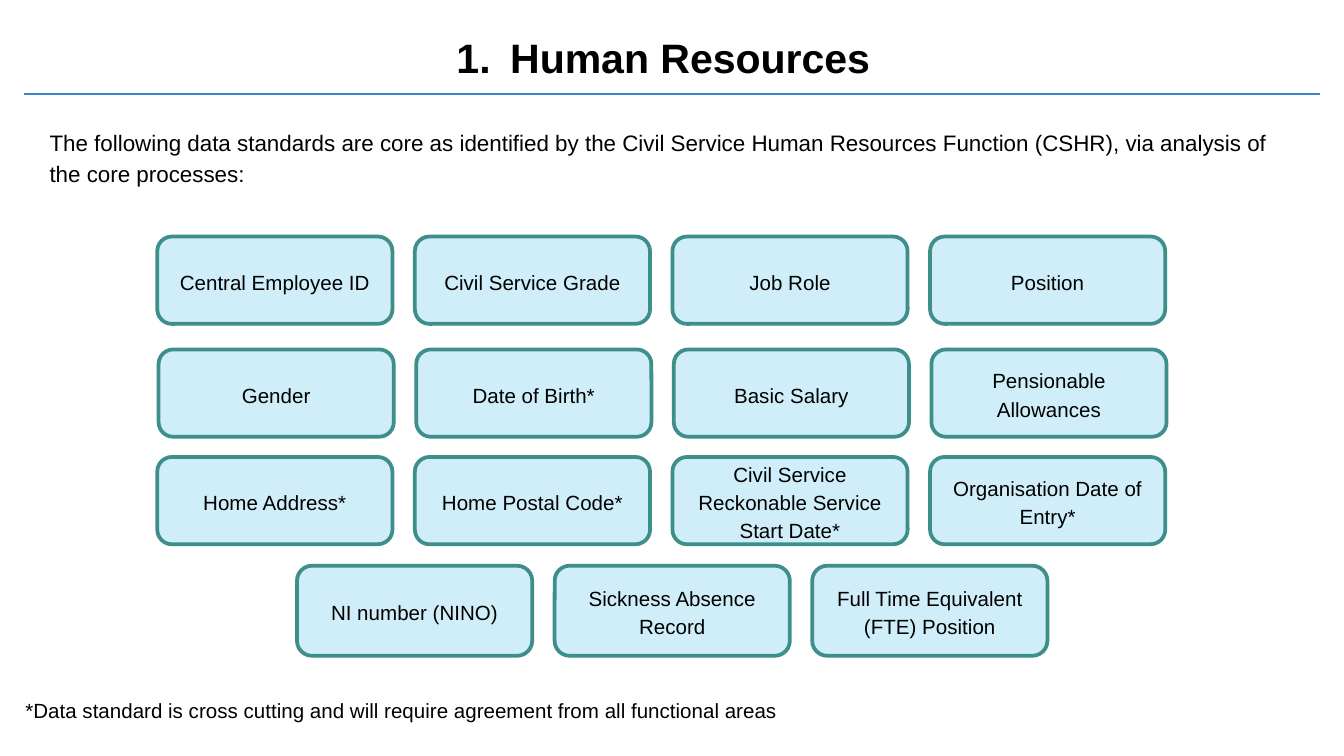
from pptx import Presentation
from pptx.dml.color import RGBColor
from pptx.enum.shapes import MSO_CONNECTOR, MSO_SHAPE
from pptx.enum.text import MSO_ANCHOR, PP_ALIGN
from pptx.oxml.ns import qn
from pptx.util import Inches, Pt
from lxml import etree

ROUND = MSO_SHAPE.ROUNDED_RECTANGLE
STRAIGHT = MSO_CONNECTOR.STRAIGHT
TOP, MIDDLE = MSO_ANCHOR.TOP, MSO_ANCHOR.MIDDLE
LEFT, CENTER = PP_ALIGN.LEFT, PP_ALIGN.CENTER

COLORS = {"text": "000000", "rule": "3D85C6", "fill": "D0EEF9", "edge": "3E8E8A"}
FONT = "Arial"

# Each row: left, top, height, labels
ROWS = [
    (1.17, 1.76, 0.65, ["Central Employee ID", "Civil Service Grade",
                        "Job Role", "Position"]),
    (1.18, 2.6, 0.65, ["Gender", "Date of Birth*", "Basic Salary",
                       "Pensionable Allowances"]),
    (1.17, 3.4, 0.65, ["Home Address*", "Home Postal Code*",
                       "Civil Service Reckonable Service Start Date*",
                       "Organisation Date of Entry*"]),
    (2.21, 4.21, 0.67, ["NI number (NINO)", "Sickness Absence Record",
                        "Full Time Equivalent (FTE) Position"]),
]
CARD = 1.75
STEP = 5.75 / 3  # four columns, first left edge to last


def color(name):
    return RGBColor.from_string(COLORS[name])


def write(shape, text, size=11, bold=False, align=LEFT, anchor=TOP,
          space=1.0, inset=(0.1, 0.1), number=False):
    frame = shape.text_frame
    frame.word_wrap = True
    frame.vertical_anchor = anchor
    frame.margin_left = frame.margin_right = Inches(inset[0])
    frame.margin_top = frame.margin_bottom = Inches(inset[1])
    para = frame.paragraphs[0]
    para.text = text
    para.alignment = align
    para.line_spacing = space
    para.space_before = Pt(0)
    if number:
        props = para._p.get_or_add_pPr()
        props.set("marL", str(Inches(0.5)))
        props.set("indent", str(Inches(-0.4)))
        tint = etree.SubElement(props, qn("a:buClr"))
        etree.SubElement(tint, qn("a:srgbClr"), val=COLORS["text"])
        etree.SubElement(props, qn("a:buFont"), typeface=FONT)
        etree.SubElement(props, qn("a:buAutoNum"), type="arabicPeriod")
    font = para.runs[0].font
    font.name, font.size, font.bold = FONT, Pt(size), bold
    font.color.rgb = color("text")


def add_text(slide, box, text, **style):
    shape = slide.shapes.add_textbox(*map(Inches, box))
    write(shape, text, **style)


def add_head(slide, box, text):
    title = slide.shapes.title
    title.left, title.top, title.width, title.height = map(Inches, box)
    write(title, text, size=22, bold=True, align=CENTER, anchor=MIDDLE,
          space=0.9, inset=(0.07, 0.04), number=True)


def add_rule(slide, left, top, width):
    line = slide.shapes.add_connector(
        STRAIGHT, Inches(left), Inches(top), Inches(left + width), Inches(top))
    line.line.color.rgb = color("rule")
    line.line.width = Pt(1.5)
    etree.SubElement(line._element.spPr, qn("a:effectLst"))


def add_card(slide, box, text):
    card = slide.shapes.add_shape(ROUND, *map(Inches, box))
    card.shadow.inherit = False
    card.fill.solid()
    card.fill.fore_color.rgb = color("fill")
    card.line.color.rgb = color("edge")
    card.line.width = Pt(2)
    write(card, text, align=CENTER, anchor=MIDDLE, space=1.15, inset=(0.1, 0.05))


def add_row(slide, left, top, height, labels):
    for col, label in enumerate(labels):
        add_card(slide, (left + col * STEP, top, CARD, height), label)


def main():
    deck = Presentation()
    deck.slide_width = Inches(10)
    deck.slide_height = deck.slide_width * 9 // 16
    slide = deck.slides.add_slide(deck.slide_layouts[5])

    # Title and rule
    add_rule(slide, 0.18, 0.7, 9.64)
    add_head(slide, (0.85, 0.15, 8.07, 0.59), "Human Resources")

    # Introduction
    add_text(slide, (0.27, 0.83, 9.45, 1.44),
             "The following data standards are core as identified by the Civil "
             "Service Human Resources Function (CSHR), via analysis of the core "
             "processes:", size=12, space=1.15)

    # Data standards
    for row in ROWS:
        add_row(slide, *row)

    # Footnote
    add_text(slide, (0.09, 5.1, 8.22, 0.39),
             "*Data standard is cross cutting and will require agreement from "
             "all functional areas")
    deck.save("out.pptx")


if __name__ == "__main__":
    main()
